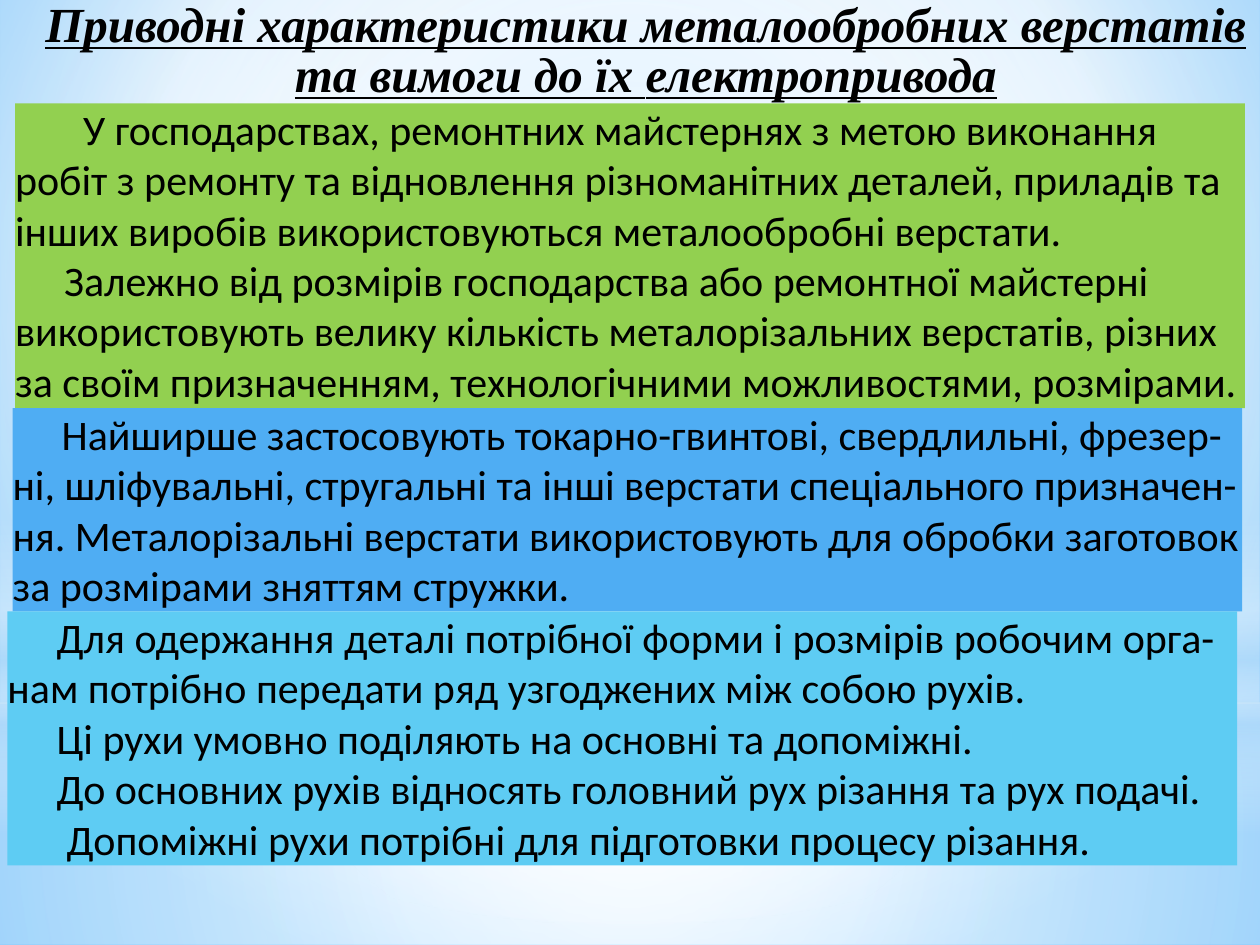
"""Build a slide on the drive characteristics of metalworking machines."""
from typing import NamedTuple

from lxml import etree
from pptx import Presentation, util as u
from pptx.dml.color import RGBColor
from pptx.enum import shapes, text
from pptx.oxml.ns import nsdecls, qn

COLORS = {
    "text": "000000", "white": "FFFFFF", "mist": "B4DCFA",
    "sky": "9ED5FF", "azure": "5BB9FF",
    "green": "92D050", "blue": "4FADF3", "cyan": "5ECCF3",
}
WIDTH, HEIGHT = 10, 7.5
PANEL_TOP, PANEL_WIDTH, LINE_HEIGHT = 0.82, 9.76, 2.42 / 6
INDENT = 0.39


class Stop(NamedTuple):
    position: int
    color: str
    opacity: int = 100


class Glow(NamedTuple):
    top: float
    height: float
    stops: list[Stop]
    kind: shapes.MSO_SHAPE = shapes.MSO_SHAPE.RECTANGLE
    linear: bool = False


class Paragraph(NamedTuple):
    words: str
    indent: float = INDENT


class Panel(NamedTuple):
    left: float
    lines: int
    color: str
    paragraphs: list[Paragraph]


BACKGROUND = [Stop(0, "sky"), Stop(60, "white"), Stop(100, "azure")]
GLOWS = [
    Glow(5.58, 1.92, [Stop(0, "white", 91), Stop(37, "white", 76), Stop(100, "mist", 79)]),
    Glow(0, 5.58, [Stop(0, "white", 89), Stop(48, "white", 62), Stop(100, "mist", 79)]),
    Glow(4.12, 2.5, [Stop(0, "white", 0), Stop(29, "white", 30), Stop(45, "mist", 40),
                     Stop(55, "white", 26), Stop(65, "mist", 60), Stop(100, "white", 0)],
         linear=True),
    Glow(1.75, 5.58, [Stop(0, "white"), Stop(56, "white", 0)], shapes.MSO_SHAPE.OVAL),
]
PANELS = [
    Panel(0.12, 6, "green", [
        Paragraph("У господарствах, ремонтних майстернях з метою виконання робіт з ремонту "
                  "та відновлення різноманітних деталей, приладів та інших виробів "
                  "використовуються металообробні верстати.", INDENT + 0.15),
        Paragraph("Залежно від розмірів господарства або ремонтної майстерні використовують "
                  "велику кількість металорізальних верстатів, різних за своїм призначенням, "
                  "технологічними можливостями, розмірами."),
    ]),
    Panel(0.1, 4, "blue", [
        Paragraph("Найширше застосовують токарно-гвинтові, свердлильні, фрезер-ні, "
                  "шліфувальні, стругальні та інші верстати спеціального призначен-ня. "
                  "Металорізальні верстати використовують для обробки заготовок за "
                  "розмірами зняттям стружки."),
    ]),
    Panel(0.06, 5, "cyan", [
        Paragraph("Для одержання деталі потрібної форми і розмірів робочим орга-нам "
                  "потрібно передати ряд узгоджених між собою рухів."),
        Paragraph("Ці рухи умовно поділяють на основні та допоміжні."),
        Paragraph("До основних рухів відносять головний рух різання та рух подачі."),
        Paragraph("Допоміжні рухи потрібні для підготовки процесу різання.", INDENT + 0.08),
    ]),
]


def set_gradient(owner, element, stops: list[Stop], focus=(50, 50, 50, 50), linear=False) -> None:
    """Give the owner of a fill a gradient, circular unless linear."""
    owner.fill.solid()
    solid = next(element.iter(qn("a:solidFill")))
    stop_list = "".join(
        f'<a:gs pos="{stop.position * 1000}"><a:srgbClr val="{COLORS[stop.color]}">'
        f'<a:alpha val="{stop.opacity * 1000}"/></a:srgbClr></a:gs>' for stop in stops)
    sides = " ".join(f'{side}="{share * 1000}"' for side, share in zip("ltrb", focus))
    shade = ('<a:lin ang="5400000" scaled="0"/>' if linear else
             f'<a:path path="circle"><a:fillToRect {sides}/></a:path>')
    gradient = etree.fromstring(f'<a:gradFill {nsdecls("a")} rotWithShape="1">'
                                f'<a:gsLst>{stop_list}</a:gsLst>{shade}</a:gradFill>')
    solid.getparent().replace(solid, gradient)


def add_block(slide, kind, left: float, top: float, width: float, height: float):
    """Add a preset shape without outline or shadow."""
    shape = slide.shapes.add_shape(kind, *map(u.Inches, (left, top, width, height)))
    shape.shadow.inherit = False
    shape.line.fill.background()
    return shape


def prepare_frame(shape):
    """Clear the margins of a text frame and anchor it to the top."""
    frame = shape.text_frame
    frame.margin_left = frame.margin_right = frame.margin_top = frame.margin_bottom = 0
    frame.word_wrap = True
    frame.auto_size = text.MSO_AUTO_SIZE.NONE
    frame.vertical_anchor = text.MSO_ANCHOR.TOP
    return frame


def add_text(paragraph, words: str, *, font="Calibri", size=24, bold=False, italic=False,
             underline=False, align=text.PP_ALIGN.LEFT, indent=0.0, spacing=1.0) -> None:
    """Add a formatted run to a paragraph."""
    run = paragraph.add_run()
    run.text = words
    run.font.name, run.font.size = font, u.Pt(size)
    run.font.bold, run.font.italic, run.font.underline = bold, italic, underline
    run.font.color.rgb = RGBColor.from_string(COLORS["text"])
    paragraph.alignment, paragraph.line_spacing = align, spacing
    paragraph.space_before = paragraph.space_after = u.Pt(0)
    properties = paragraph._p.get_or_add_pPr()
    properties.set("marL", "0")
    properties.set("indent", str(u.Inches(indent)))


def add_glow(slide, glow: Glow) -> None:
    """Draw one translucent full-width layer of the backdrop."""
    shape = add_block(slide, glow.kind, 0, glow.top, WIDTH, glow.height)
    set_gradient(shape, shape._element, glow.stops, linear=glow.linear)


def add_panel(slide, panel: Panel, top: float) -> None:
    """Draw one coloured panel with its paragraphs."""
    shape = add_block(slide, shapes.MSO_SHAPE.RECTANGLE, panel.left, top,
                      PANEL_WIDTH, panel.lines * LINE_HEIGHT)
    shape.fill.solid()
    shape.fill.fore_color.rgb = RGBColor.from_string(COLORS[panel.color])
    frame = prepare_frame(shape)
    for index, item in enumerate(panel.paragraphs):
        paragraph = frame.add_paragraph() if index else frame.paragraphs[0]
        add_text(paragraph, item.words, indent=item.indent)


def place_title(slide) -> None:
    """Put the title placeholder above the backdrop and fill it."""
    title = slide.shapes.title
    title._element.getparent().append(title._element)
    title.left, title.top, title.width, title.height = map(u.Inches, (0.34, 0.02, 9.57, 0.8))
    paragraph = prepare_frame(title).paragraphs[0]
    for words, italic in (("Приводні характеристики металообробних верстатів та вимоги до їх", True),
                          (" ", False), ("електропривода", True)):
        add_text(paragraph, words, font="Times New Roman", size=28, bold=True, italic=italic,
                 underline=True, align=text.PP_ALIGN.CENTER, spacing=0.85)


def main() -> None:
    """Assemble and save the presentation."""
    presentation = Presentation()
    presentation.slide_width, presentation.slide_height = u.Inches(WIDTH), u.Inches(HEIGHT)
    slide = presentation.slides.add_slide(presentation.slide_layouts.get_by_name("Title Only"))
    set_gradient(slide.background, slide._element, BACKGROUND, focus=(20, 10, 20, 60))
    for glow in GLOWS:
        add_glow(slide, glow)
    place_title(slide)
    top = PANEL_TOP
    for panel in PANELS:
        add_panel(slide, panel, top)
        top += panel.lines * LINE_HEIGHT
    presentation.save("out.pptx")


if __name__ == "__main__":
    main()
